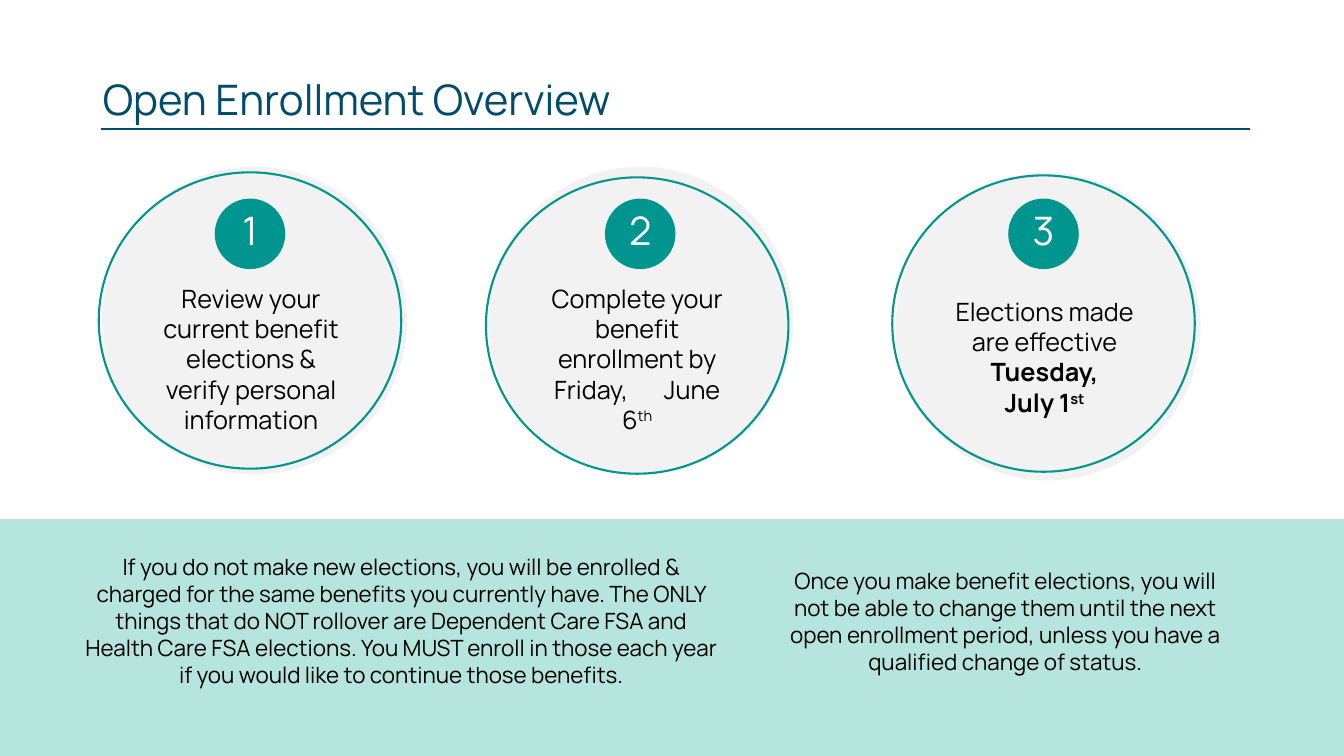
from dataclasses import dataclass

from lxml.etree import SubElement
from pptx import Presentation
from pptx.dml.color import RGBColor
from pptx.enum.shapes import MSO_CONNECTOR, MSO_SHAPE
from pptx.enum.text import MSO_ANCHOR, PP_ALIGN
from pptx.oxml.ns import qn
from pptx.util import Inches, Pt


@dataclass(frozen=True)
class Theme:
    """Colours, font and type sizes of the slide."""
    font: str = "Manrope"
    navy: str = "004C6C"
    teal: str = "00968F"
    mint: str = "98DBCE"
    grey: str = "F2F2F2"
    black: str = "000000"
    white: str = "FFFFFF"
    title_size: int = 30
    number_size: int = 28
    step_size: int = 18
    note_size: int = 16


THEME = Theme()
TITLE = "Open Enrollment Overview"
PLAIN, BOLD, RAISED, WIDE = (
    {}, {"bold": True}, {"baseline": "30000"}, {"spc": "2200"})
STEPS = [
    {"disc": (1.02, 1.66), "ring": (0.98, 1.71), "badge": 2.13, "text_top": 2.81,
     "lines": [[("Review your current benefit elections & verify personal "
                 "information", PLAIN)]]},
    {"disc": (4.85, 1.66), "ring": (4.82, 1.76), "badge": 6, "text_top": 2.81,
     "lines": [[("Complete your benefit enrollment by Friday,", PLAIN), (" ", WIDE),
                ("June 6", PLAIN), ("th", RAISED)]]},
    {"disc": (8.89, 1.72), "ring": (8.85, 1.74), "badge": 10, "text_top": 2.94,
     "lines": [[("Elections made are effective", PLAIN)],
               [("Tuesday,", BOLD)],
               [("July 1", BOLD), ("st", BOLD | RAISED)]]},
]
NOTES = [
    ((0.72, 5.44, 6.52, 1.45), 0.1,
     "If you do not make new elections, you will be enrolled & charged for the same "
     "benefits you currently have. The ONLY things that do NOT rollover are Dependent "
     "Care FSA and Health Care FSA elections. You MUST enroll in those each year if "
     "you would like to continue those benefits."),
    ((7.57, 5.58, 4.67, 1.18), 0.23,
     "Once you make benefit elections, you will not be able to change them until the "
     "next open enrollment period, unless you have a qualified change of status."),
]
DISC_SIZE = (3.01, 3.04)
RING_SIZE = (3, 2.94)
BADGE_TOP, BADGE_SIZE = 1.97, 0.7
CIRCLE_INSET = (1 - 0.5 ** 0.5) / 2


def color(value):
    return RGBColor.from_string(value)


def style_font(font, size, value):
    font.name, font.size = THEME.font, Pt(size)
    font.color.rgb = color(value)


def add_form(slide, kind, box, fill=None, line=None, width=1):
    shape = slide.shapes.add_shape(kind, *map(Inches, box))
    shape.shadow.inherit = False
    if fill:
        shape.fill.solid()
        shape.fill.fore_color.rgb = color(fill)
    else:
        shape.fill.background()
    if line:
        shape.line.color.rgb = color(line)
        shape.line.width = Pt(width)
    else:
        shape.line.fill.background()
    return shape


def set_margins(frame, left, top, right, bottom):
    frame.margin_left, frame.margin_top = Inches(left), Inches(top)
    frame.margin_right, frame.margin_bottom = Inches(right), Inches(bottom)


def write_lines(frame, lines, size, value):
    for index, pieces in enumerate(lines):
        paragraph = frame.add_paragraph() if index else frame.paragraphs[0]
        paragraph.alignment = PP_ALIGN.CENTER
        for text, look in pieces:
            run = paragraph.add_run()
            run.text = text
            style_font(run.font, size, value)
            run.font.bold = look.get("bold", False)
            for name in look.keys() - {"bold"}:
                run.font._element.set(name, look[name])


def add_title(slide):
    title = slide.shapes.title
    title.left, title.top, title.width, title.height = map(
        Inches, (0.92, 0.74, 11.5, 0.54))
    frame = title.text_frame
    frame.text = TITLE
    frame.vertical_anchor = MSO_ANCHOR.MIDDLE
    paragraph = frame.paragraphs[0]
    paragraph.alignment, paragraph.line_spacing = PP_ALIGN.LEFT, 0.9
    style_font(paragraph.runs[0].font, THEME.title_size, THEME.navy)
    rule = slide.shapes.add_connector(
        MSO_CONNECTOR.STRAIGHT, *map(Inches, (1, 1.28, 12.4, 1.28)))
    rule.line.color.rgb = color(THEME.navy)
    rule.line.width = Pt(1.5)
    SubElement(rule._element.spPr, qn("a:effectLst"))


def add_step(slide, number, step):
    disc = add_form(slide, MSO_SHAPE.OVAL, step["disc"] + DISC_SIZE,
                    THEME.grey, THEME.grey)
    frame = disc.text_frame
    frame.word_wrap = True
    frame.vertical_anchor = MSO_ANCHOR.TOP
    inner_top = step["disc"][1] + DISC_SIZE[1] * CIRCLE_INSET
    set_margins(frame, 0.13, step["text_top"] - inner_top, 0.2, 0)
    write_lines(frame, step["lines"], THEME.step_size, THEME.black)
    add_form(slide, MSO_SHAPE.OVAL, step["ring"] + RING_SIZE,
             line=THEME.teal, width=1.5)
    badge = add_form(slide, MSO_SHAPE.OVAL,
                     (step["badge"], BADGE_TOP, BADGE_SIZE, BADGE_SIZE), THEME.teal)
    badge.text_frame.vertical_anchor = MSO_ANCHOR.BOTTOM
    write_lines(badge.text_frame, [[(str(number), PLAIN)]],
                THEME.number_size, THEME.white)


def add_notes_band(slide):
    band = add_form(slide, MSO_SHAPE.RECTANGLE, (0, 5.15, 13.33, 2.35), THEME.mint)
    tint = band._element.spPr.find(qn("a:solidFill"))[0]
    SubElement(tint, qn("a:alpha"), val="71000")
    for box, left_margin, text in NOTES:
        frame = slide.shapes.add_textbox(*map(Inches, box)).text_frame
        frame.word_wrap = True
        set_margins(frame, left_margin, 0.05, 0.1, 0.05)
        write_lines(frame, [[(text, PLAIN)]], THEME.note_size, THEME.black)


def main():
    presentation = Presentation()
    presentation.slide_width, presentation.slide_height = Inches(13.33), Inches(7.5)
    slide = presentation.slides.add_slide(presentation.slide_layouts[5])
    add_title(slide)
    add_notes_band(slide)
    for number, step in enumerate(STEPS, 1):
        add_step(slide, number, step)
    presentation.save("out.pptx")


if __name__ == "__main__":
    main()
